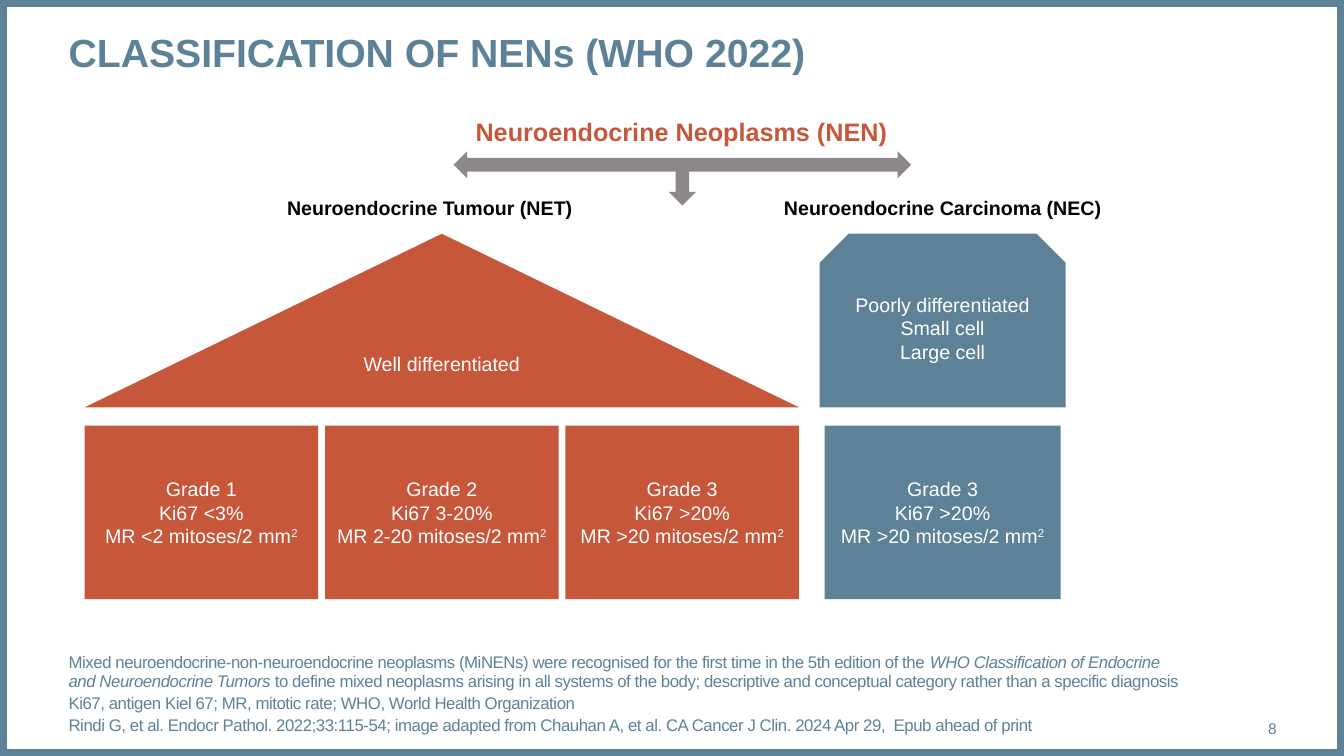
from dataclasses import dataclass

from lxml import etree
from pptx import Presentation
from pptx import util as u
from pptx.dml.color import RGBColor
from pptx.enum import shapes, text
from pptx.oxml import ns

Pt = u.Pt
KIND = shapes.MSO_SHAPE
ALIGN = text.PP_ALIGN
ANCHOR = text.MSO_ANCHOR


@dataclass(frozen=True)
class Theme:
    font: str = "Arial"
    blue: str = "5D8298"
    red: str = "C6573B"
    gray: str = "8B878B"
    black: str = "000000"
    white: str = "FFFFFF"
    title: int = 28
    head: int = 18
    main: int = 14
    note: int = 12
    page: int = 11


THEME = Theme()
WIDTH, HEIGHT = 960, 540
MARGIN = 49

# Shared rows and columns of the diagram
ROOF_TOP, GRADE_TOP, ROW = 167, 304, 124
LEFT, GRADE, GAP = 60.5, 166.8, 4.9

NET = [
    ("Grade 1", "Ki67 <3%", "MR <2 mitoses/2 mm"),
    ("Grade 2", "Ki67 3-20%", "MR 2-20 mitoses/2 mm"),
    ("Grade 3", "Ki67 >20%", "MR >20 mitoses/2 mm"),
]
NEC = NET[2]
NOTES = [
    [
        ("Mixed neuroendocrine-non-neuroendocrine neoplasms (MiNENs) were "
         "recognised for the first time in the 5th edition of the ", False),
        ("WHO Classification of Endocrine and Neuroendocrine Tumors ", True),
        ("to define mixed neoplasms arising in all systems of the body; "
         "descriptive and conceptual category rather than a specific diagnosis",
         False),
    ],
    [("Ki67, antigen Kiel 67; MR, mitotic rate; WHO, World Health Organization",
      False)],
    [("Rindi G, et al. Endocr Pathol. 2022;33:115-54; image adapted from "
      "Chauhan A, et al. CA Cancer J Clin. 2024 Apr 29,  Epub ahead of print",
      False)],
]


def color(code):
    return RGBColor.from_string(code)


def style(para, size, code, bold=False, align=ALIGN.LEFT):
    para.alignment = align
    font = para.font
    font.name, font.size, font.bold = THEME.font, Pt(size), bold
    font.color.rgb = color(code)


def frame(shape, anchor=ANCHOR.TOP, wrap=True, inset=0):
    body = shape.text_frame
    body.word_wrap = wrap
    body.auto_size = text.MSO_AUTO_SIZE.NONE
    body.vertical_anchor = anchor
    if inset is not None:
        body.margin_left = body.margin_right = Pt(inset)
        body.margin_top = body.margin_bottom = Pt(inset)
    return body


def place(shape, *spot):
    shape.left, shape.top, shape.width, shape.height = map(Pt, spot)


def title(slide, words):
    shape = slide.shapes.title
    place(shape, MARGIN, 20, 863, 68)
    body = frame(shape)
    body.text = words
    style(body.paragraphs[0], THEME.title, THEME.blue, True)


def label(slide, words, spot, size, code, bold=True, align=ALIGN.CENTER,
          anchor=ANCHOR.TOP):
    body = frame(slide.shapes.add_textbox(*map(Pt, spot)), anchor, wrap=False)
    body.text = words
    style(body.paragraphs[0], size, code, bold, align)


def block(slide, kind, spot, code, lines=(), wrap=True, inset=None):
    shape = slide.shapes.add_shape(kind, *map(Pt, spot))
    shape.shadow.inherit = False
    shape.fill.solid()
    shape.fill.fore_color.rgb = color(code)
    shape.line.fill.background()
    if lines:
        body = frame(shape, ANCHOR.MIDDLE, wrap, inset)
        body.text = "\n".join(lines)
        for para in body.paragraphs:
            style(para, THEME.main, THEME.white, align=ALIGN.CENTER)
    return shape


def grade(slide, left, width, code, lines):
    shape = block(slide, KIND.RECTANGLE, (left, GRADE_TOP, width, ROW), code,
                  lines, wrap=False, inset=0)
    power = shape.text_frame.paragraphs[-1].add_run()
    power.text = "2"
    power.font._element.set("baseline", "30000")


def border(slide):
    shape = slide.shapes.add_shape(KIND.RECTANGLE, 0, 0, Pt(WIDTH), Pt(HEIGHT))
    shape.shadow.inherit = False
    shape.fill.background()
    shape.line.color.rgb = color(THEME.blue)
    shape.line.width = Pt(10)


def fork(slide, spot):
    shape = block(slide, KIND.LEFT_RIGHT_UP_ARROW, spot, THEME.gray)
    shape._element.spPr.find(ns.qn("a:xfrm")).set("flipV", "1")


def notes(slide, spot):
    body = frame(slide.shapes.add_textbox(*map(Pt, spot)), ANCHOR.BOTTOM)
    for pos, parts in enumerate(NOTES):
        para = body.add_paragraph() if pos else body.paragraphs[0]
        para.line_spacing, para.space_after = 0.95, Pt(2)
        style(para, THEME.note, THEME.blue)
        for words, slant in parts:
            run = para.add_run()
            run.text = words
            run.font._element.set("spc", "-30")
            if slant:
                run.font.italic = True


def main():
    deck = Presentation()
    deck.slide_width, deck.slide_height = Pt(WIDTH), Pt(HEIGHT)
    slide = deck.slides.add_slide(deck.slide_layouts[5])

    # Frame, title and footer
    border(slide)
    title(slide, "CLASSIFICATION OF NENs (WHO 2022)")
    label(slide, "8", (850, 506, 62, 29), THEME.page, THEME.blue, False,
          ALIGN.RIGHT, ANCHOR.MIDDLE)
    notes(slide, (MARGIN, 465, 801.4, 60))

    # Headings and the arrow between them
    label(slide, "Neuroendocrine Neoplasms (NEN)", (333.4, 83, 306.7, 21.6),
          THEME.head, THEME.red)
    label(slide, "Neuroendocrine Tumour (NET)", (203.8, 139.7, 206.6, 17),
          THEME.main, THEME.black)
    label(slide, "Neuroendocrine Carcinoma (NEC)", (559.4, 139.7, 228.2, 17),
          THEME.main, THEME.black)
    fork(slide, (324, 108, 326.9, 38.9))

    # Tumours: a roof over three grades
    span = len(NET) * GRADE + (len(NET) - 1) * GAP
    block(slide, KIND.ISOSCELES_TRIANGLE, (LEFT, ROOF_TOP, span, ROW),
          THEME.red, ["Well differentiated"])
    for pos, lines in enumerate(NET):
        grade(slide, LEFT + pos * (GRADE + GAP), GRADE, THEME.red, lines)

    # Carcinomas: a roof over one grade
    block(slide, KIND.SNIP_2_SAME_RECTANGLE, (585.5, ROOF_TOP, 175.7, ROW),
          THEME.blue, ["Poorly differentiated", "Small cell", "Large cell"])
    grade(slide, 589, 168.6, THEME.blue, NEC)

    deck.save("out.pptx")


if __name__ == "__main__":
    main()
